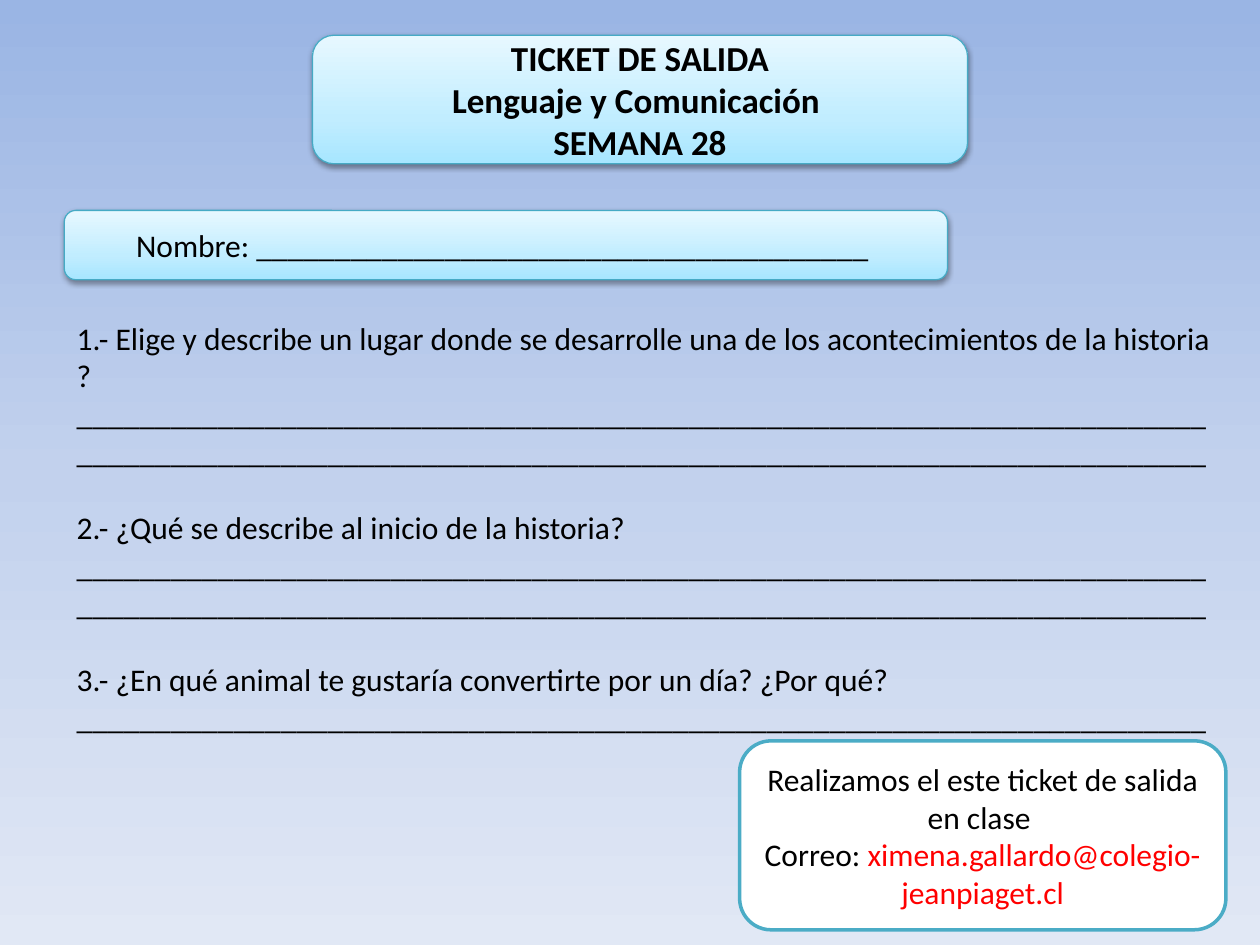
import pptx
import pptx.util
from lxml import etree
from pptx.dml.color import RGBColor
from pptx.enum.shapes import MSO_SHAPE
from pptx.enum.text import MSO_ANCHOR, MSO_AUTO_SIZE, PP_ALIGN
from pptx.oxml.ns import qn
from pptx.util import Inches

HUES = {"text": "000000", "mail": "FF0000", "card": "FFFFFF",
        "edge": "46AAC5", "rim": "4BACC6", "shade": "000000"}
SKY = [(0, "9AB5E4"), (50, "C2D1ED"), (100, "E1E8F5")]
ICE = [(0, "A7E6FF"), (35, "C1EDFF"), (100, "E7F8FF")]
RULE = "_" * 72  # one answer line across the page


def color(name):
    return RGBColor.from_string(HUES[name])


def add_color(node, value):
    return etree.SubElement(node, qn("a:srgbClr"), val=value)


def blend(fill, root, stops, angle):
    """Give a fill a linear gradient with any number of stops."""
    fill.gradient()
    grad = root.find(".//" + qn("a:gradFill"))
    for child in list(grad):
        grad.remove(child)
    group = etree.SubElement(grad, qn("a:gsLst"))
    for pos, value in stops:
        add_color(etree.SubElement(group, qn("a:gs"), pos=str(pos * 1000)), value)
    etree.SubElement(grad, qn("a:lin"), ang=str(angle * 60000), scaled="0")


def write(para, text, bold=None, size=18, align=PP_ALIGN.CENTER):
    para.text = text
    para.alignment = align
    font = para.font
    font.name, font.size, font.bold = "Calibri", pptx.util.Pt(size), bold
    font.color.rgb = color("text")


def add_lines(frame, lines, **style):
    for i, text in enumerate(lines):
        para = frame.paragraphs[0] if i == 0 else frame.add_paragraph()
        write(para, text, **style)


def add_box(slide, area, edge, width):
    box = slide.shapes.add_shape(MSO_SHAPE.ROUNDED_RECTANGLE, *map(Inches, area))
    box.line.color.rgb = color(edge)
    box.line.width = pptx.util.Pt(width)
    box.shadow.inherit = False
    box.text_frame.word_wrap = True
    box.text_frame.vertical_anchor = MSO_ANCHOR.MIDDLE
    return box


def add_panel(slide, area, lines, **style):
    """Rounded ice-blue panel with a soft shadow below."""
    box = add_box(slide, area, "edge", 0.75)
    props = box.element.spPr
    blend(box.fill, props, ICE, 270)
    shade = etree.SubElement(props.find(qn("a:effectLst")), qn("a:outerShdw"),
                             blurRad="40000", dist="20000", dir="5400000",
                             rotWithShape="0")
    etree.SubElement(add_color(shade, HUES["shade"]), qn("a:alpha"), val="38000")
    add_lines(box.text_frame, lines, **style)


def add_quiz(slide, area, items):
    """Questions, each followed by its answer lines."""
    frame = slide.shapes.add_textbox(*map(Inches, area)).text_frame
    frame.word_wrap = True
    frame.auto_size = MSO_AUTO_SIZE.SHAPE_TO_FIT_TEXT
    lines = [text for ask, count in items for text in (ask, RULE * count)]
    add_lines(frame, lines, align=PP_ALIGN.LEFT)
    for para in frame.paragraphs[2::2]:
        para.space_before = pptx.util.Pt(22)


def add_note(slide, area, text, label, mail):
    box = add_box(slide, area, "rim", 2)
    box.fill.solid()
    box.fill.fore_color.rgb = color("card")
    add_lines(box.text_frame, [text, label])
    run = box.text_frame.paragraphs[1].add_run()
    run.text = mail
    run.font.color.rgb = color("mail")


def main():
    deck = pptx.Presentation()
    deck.slide_width, deck.slide_height = Inches(10), Inches(7.5)
    slide = deck.slides.add_slide(deck.slide_layouts[6])
    blend(slide.background.fill, slide.element, SKY, 90)

    # Heading and name field
    add_panel(slide, (2.48, 0.28, 5.2, 1.02),
              ["TICKET DE SALIDA", "Lenguaje y Comunicación ", "SEMANA 28"],
              bold=True, size=20)
    add_panel(slide, (0.51, 1.67, 7.01, 0.55), ["Nombre: " + "_" * 39 + " "])

    # Questions with their number of answer lines
    add_quiz(slide, (0.51, 2.48, 9.21, 3.43), [
        ("1.- Elige y describe un lugar donde se desarrolle una de los "
         "acontecimientos de la historia ?", 2),
        ("2.- ¿Qué se describe al inicio de la historia?", 2),
        ("3.- ¿En qué animal te gustaría convertirte por un día? ¿Por qué?", 1),
    ])

    # Contact note
    add_note(slide, (5.87, 5.88, 3.86, 1.5),
             "Realizamos el este ticket de salida en clase ",
             "Correo: ", "ximena.gallardo@colegio-jeanpiaget.cl")
    deck.save("out.pptx")


if __name__ == "__main__":
    main()
